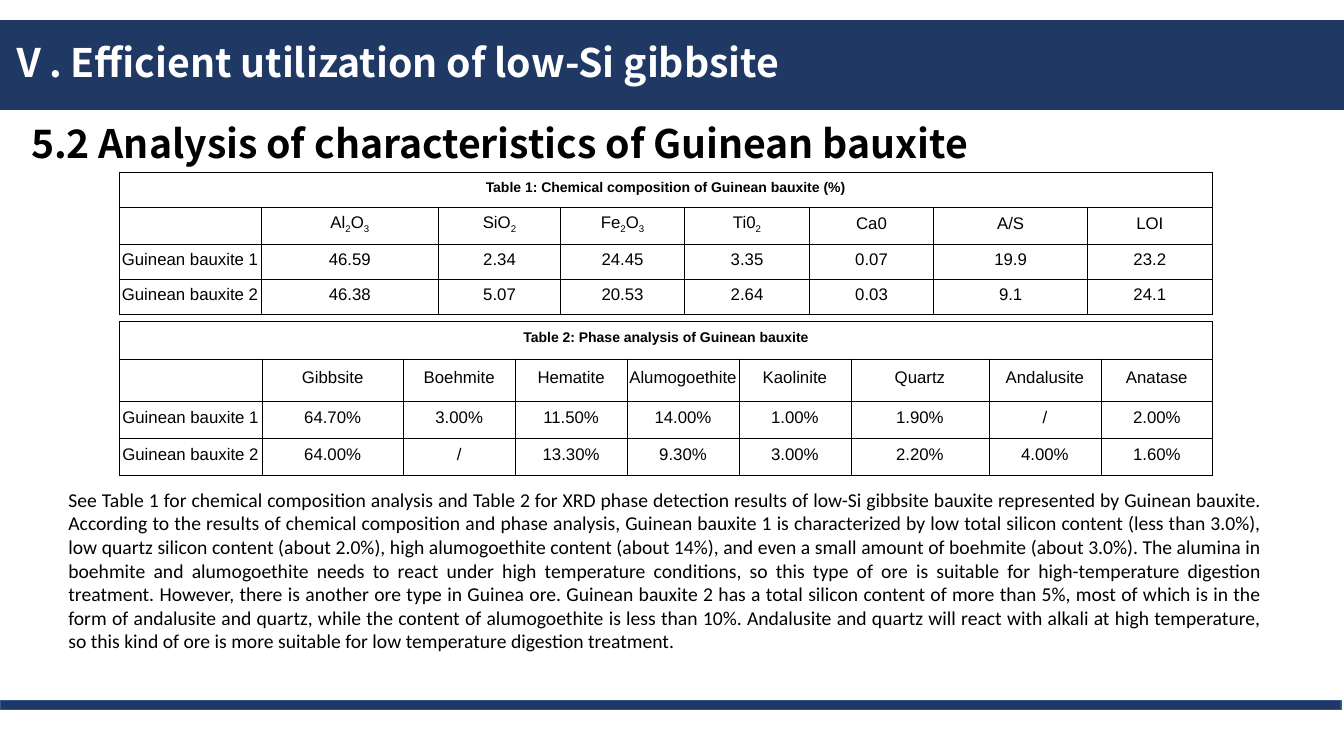
from lxml import etree
from pptx import Presentation
from pptx import util as u
from pptx.dml.color import RGBColor
from pptx.enum import shapes, text
from pptx.oxml.ns import qn

NAVY = RGBColor(0x20, 0x38, 0x64)
EDGE = RGBColor(0x32, 0x54, 0x91)
WHITE = RGBColor(255, 255, 255)
BLACK = RGBColor(0, 0, 0)

WIDTH, HEIGHT = 13.33, 7.5
HEAD = dict(name="Noto Sans CJK SC", size=u.Pt(28), bold=True)
CAPTION = dict(name="Arial", size=u.Pt(10), bold=True)
CELL = dict(name="Arial", size=u.Pt(12), bold=False)
PROSE = dict(name="Calibri", size=u.Pt(14), bold=False)

BARS = [
    ((0, 6.95, 13.3, 0.09), EDGE),
    ((0, 0.2, WIDTH, 0.89), None),
]
TITLE = "Ⅴ. Efficient utilization of low-Si gibbsite"
SUBTITLE = "5.2 Analysis of characteristics of Guinean bauxite"
BODY = [
    "See Table 1 for chemical composition analysis and Table 2 for XRD phase detection "
    "results of low-Si gibbsite bauxite represented by Guinean bauxite.",
    "According to the results of chemical composition and phase analysis, Guinean bauxite 1 "
    "is characterized by low total silicon content (less than 3.0%), low quartz silicon "
    "content (about 2.0%), high alumogoethite content (about 14%), and even a small amount "
    "of boehmite (about 3.0%).",
    "The alumina in boehmite and alumogoethite needs to react under high temperature "
    "conditions, so this type of ore is suitable for high-temperature digestion treatment.",
    "However, there is another ore type in Guinea ore.",
    "Guinean bauxite 2 has a total silicon content of more than 5%, most of which is in the "
    "form of andalusite and quartz, while the content of alumogoethite is less than 10%.",
    "Andalusite and quartz will react with alkali at high temperature, so this kind of ore "
    "is more suitable for low temperature digestion treatment.",
]
TABLES = [
    dict(
        top=1.71,
        cols=[1.41, 1.76, 1.21, 1.23, 1.24, 1.23, 1.53, 1.23],
        heights=[0.35] * 4,
        rows=[
            ["Table 1: Chemical composition of Guinean bauxite (%)"],
            ["", "Al_2_O_3", "SiO_2", "Fe_2_O_3", "Ti0_2", "Ca0", "A/S", "LOI"],
            ["Guinean bauxite 1", "46.59", "2.34", "24.45", "3.35", "0.07", "19.9", "23.2"],
            ["Guinean bauxite 2", "46.38", "5.07", "20.53", "2.64", "0.03", "9.1", "24.1"],
        ],
    ),
    dict(
        top=3.19,
        cols=[1.42, 1.4, 1.11, 1.11, 1.11, 1.11, 1.37, 1.11, 1.11],
        heights=[0.37, 0.42, 0.37, 0.37],
        rows=[
            ["Table 2: Phase analysis of Guinean bauxite"],
            ["", "Gibbsite", "Boehmite", "Hematite", "Alumogoethite", "Kaolinite",
             "Quartz", "Andalusite", "Anatase"],
            ["Guinean bauxite 1", "64.70%", "3.00%", "11.50%", "14.00%", "1.00%",
             "1.90%", "/", "2.00%"],
            ["Guinean bauxite 2", "64.00%", "/", "13.30%", "9.30%", "3.00%",
             "2.20%", "4.00%", "1.60%"],
        ],
    ),
]
TABLE_LEFT = 1.18
CELL_FORMAT = dict(
    vertical_anchor=text.MSO_ANCHOR.MIDDLE,
    margin_left=u.Inches(0.01), margin_right=u.Inches(0.01),
    margin_top=u.Inches(0.01), margin_bottom=u.Inches(0.05),
)


def apply(obj, values):
    for key, value in values.items():
        setattr(obj, key, value)


def add_run(p, words, font, color):
    r = p.add_run()
    r.text = words
    apply(r.font, font)
    r.font.color.rgb = color
    return r


def add_text(slide, box, words, font, color, frame, para):
    sp = slide.shapes.add_textbox(*map(u.Inches, box))
    tf = sp.text_frame
    apply(tf, dict(word_wrap=True, **frame))
    p = tf.paragraphs[0]
    apply(p, para)
    add_run(p, words, font, color)
    return sp


def add_borders(cell):
    tcPr = cell._tc.get_or_add_tcPr()
    for side in ("lnL", "lnR", "lnT", "lnB"):
        ln = etree.SubElement(tcPr, qn(f"a:{side}"), w=str(u.Pt(0.5)))
        fill = etree.SubElement(ln, qn("a:solidFill"))
        etree.SubElement(fill, qn("a:srgbClr"), val=str(BLACK))


def fill_cell(cell, words, font):
    apply(cell, CELL_FORMAT)
    add_borders(cell)
    cell.fill.background()
    p = cell.text_frame.paragraphs[0]
    p.alignment = text.PP_ALIGN.CENTER
    for i, part in enumerate(words.split("_")):
        r = add_run(p, part, font, BLACK)
        if i % 2:
            r.font._element.set("baseline", "-25000")


def add_grid(slide, top, cols, heights, rows):
    box = (TABLE_LEFT, top, sum(cols), sum(heights))
    frame = slide.shapes.add_table(len(rows), len(cols), *map(u.Inches, box))
    table = frame.table
    apply(table, dict(first_row=False, horz_banding=False))
    for col, width in zip(table.columns, cols):
        col.width = u.Inches(width)
    for row, height in zip(table.rows, heights):
        row.height = u.Inches(height)
    table.cell(0, 0).merge(table.cell(0, len(cols) - 1))
    for i, row in enumerate(rows):
        padded = row + [""] * (len(cols) - len(row))
        for j, words in enumerate(padded):
            fill_cell(table.cell(i, j), words, CELL if i else CAPTION)


def main():
    """Build the Guinean bauxite slide."""
    prs = Presentation()
    apply(prs, dict(slide_width=u.Inches(WIDTH), slide_height=u.Inches(HEIGHT)))
    slide = prs.slides.add_slide(prs.slide_layouts[6])
    for box, edge in BARS:
        sp = slide.shapes.add_shape(shapes.MSO_SHAPE.RECTANGLE, *map(u.Inches, box))
        sp.shadow.inherit = False
        sp.fill.solid()
        sp.fill.fore_color.rgb = NAVY
        if edge is None:
            sp.line.fill.background()
        else:
            sp.line.color.rgb = edge
            sp.line.width = u.Pt(1)
    add_text(slide, (0, -0.08, 11.5, 1.45), TITLE, HEAD, WHITE,
             dict(vertical_anchor=text.MSO_ANCHOR.MIDDLE), dict(line_spacing=0.9))
    body = add_text(slide, (0.58, 4.79, 12.04, 1.75), " ".join(BODY), PROSE, BLACK,
                    dict(auto_size=text.MSO_AUTO_SIZE.SHAPE_TO_FIT_TEXT),
                    dict(alignment=text.PP_ALIGN.JUSTIFY))
    body.fill.solid()
    body.fill.fore_color.rgb = WHITE
    for grid in TABLES:
        add_grid(slide, **grid)
    add_text(slide, (0.21, 1.19, 10.8, 0.53), SUBTITLE, HEAD, BLACK,
             dict(auto_size=text.MSO_AUTO_SIZE.SHAPE_TO_FIT_TEXT), dict(line_spacing=0.9))
    prs.save("out.pptx")


if __name__ == "__main__":
    main()
